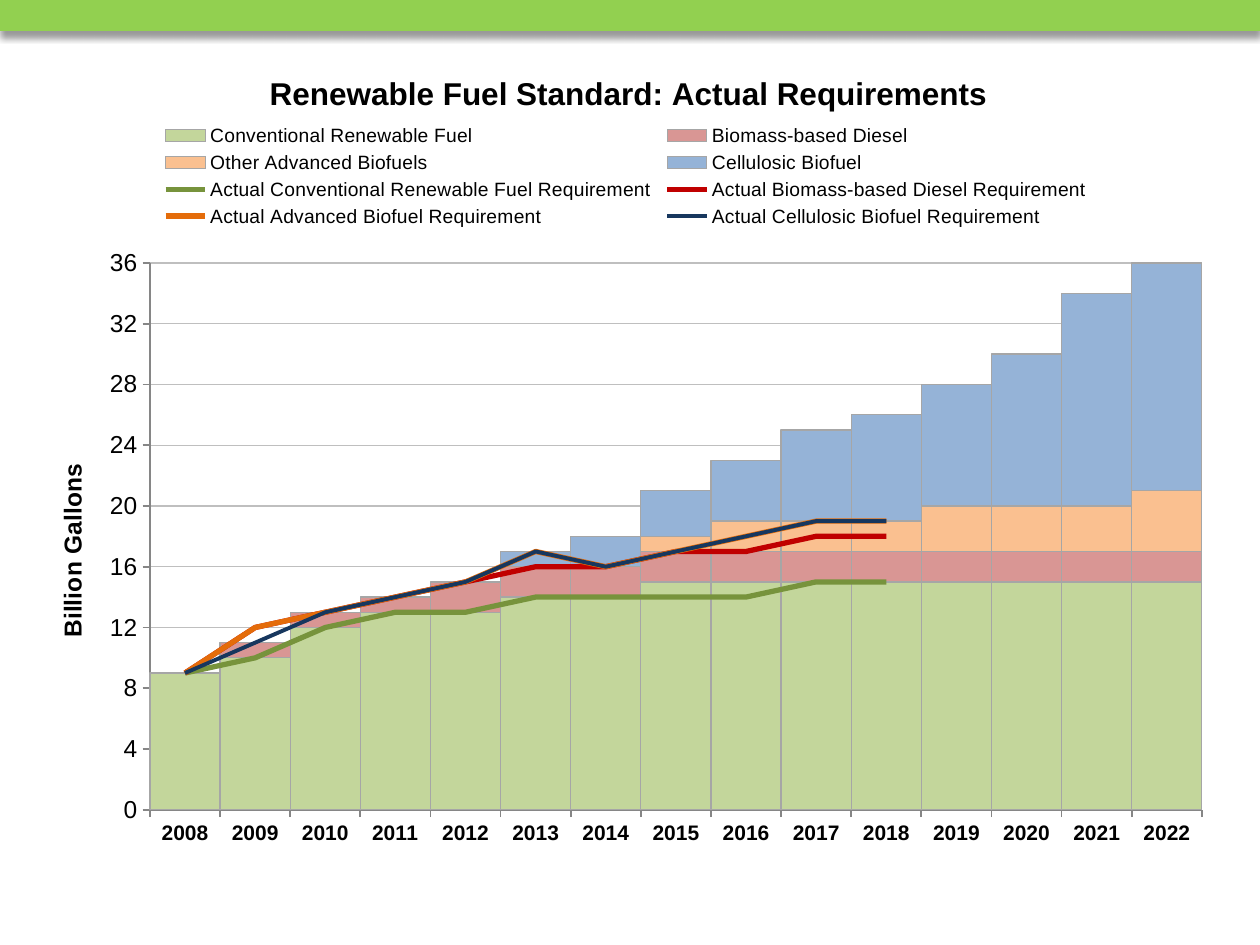
from lxml import etree
from pptx import Presentation
from pptx import util as u
from pptx.chart.data import CategoryChartData
from pptx.dml.color import RGBColor
from pptx.enum import chart as ec, shapes
from pptx.oxml.ns import qn

PX = 914400 // 126
COLORS = {
    "bar": "92D050", "text": "000000", "grid": "BFBFBF", "axis": "868686",
    "edge": "A6A6A6", "conv": "C3D69B", "bio": "D99694", "other": "FAC090",
    "cell": "95B3D7", "conv_req": "77933C", "bio_req": "C00000",
    "adv_req": "E46C0A", "cell_req": "17375E",
}
HUE = {key: RGBColor.from_string(val) for key, val in COLORS.items()}
LEFT, TOP, WIDE, HIGH = 21, 38, 1205, 823  # chart frame


def write(frame, words, size=18, bold=True):
    para = frame.paragraphs[0]
    run = para.add_run()
    run.text = words
    run.font.size, run.font.bold = u.Pt(size), bold
    run.font.name, run.font.color.rgb = "Arial", HUE["text"]


def place(part, spot, x, y, w=None, h=None, inner=False):
    """Fix a chart part at slide px; spot is its layout's child index."""
    for old in part.findall(qn("c:layout")):
        part.remove(old)
    box = etree.Element(qn("c:layout"))
    part.insert(spot, box)
    man = etree.SubElement(box, qn("c:manualLayout"))
    rows = [("xMode", "edge"), ("yMode", "edge"),
            ("x", round((x - LEFT) / WIDE, 4)), ("y", round((y - TOP) / HIGH, 4))]
    if inner:
        rows.insert(0, ("layoutTarget", "inner"))
    if w:
        rows += [("w", round(w / WIDE, 4)), ("h", round(h / HIGH, 4))]
    for tag, val in rows:
        etree.SubElement(man, qn("c:" + tag)).set("val", str(val))


prs = Presentation()
prs.slide_width, prs.slide_height = u.Inches(10), u.Inches(7.5)
slide = prs.slides.add_slide(prs.slide_layouts[6])

# Top band with a soft shadow
band = slide.shapes.add_shape(shapes.MSO_SHAPE.RECTANGLE, 0, 0, prs.slide_width, 31 * PX)
band.fill.solid()
band.fill.fore_color.rgb = HUE["bar"]
band.line.fill.background()
band.shadow.inherit = False
glow = etree.SubElement(band._element.spPr.find(qn("a:effectLst")), qn("a:outerShdw"),
                        blurRad="50800", dist="38100", dir="5400000",
                        algn="t", rotWithShape="0")
tint = etree.SubElement(glow, qn("a:srgbClr"), val="000000")
etree.SubElement(tint, qn("a:alpha"), val="40000")

# Chart data: four stacked columns, then four lines
bars = [
    ("Conventional Renewable Fuel", "conv",
     [9, 10, 12, 13, 13, 14, 14, 15, 15, 15, 15, 15, 15, 15, 15]),
    ("Biomass-based Diesel", "bio",
     [0, 1, 1, 1, 2, 2, 2, 2, 2, 2, 2, 2, 2, 2, 2]),
    ("Other Advanced Biofuels", "other",
     [0, 0, 0, 0, 0, 0, 0, 1, 2, 2, 2, 3, 3, 3, 4]),
    ("Cellulosic Biofuel", "cell",
     [0, 0, 0, 0, 0, 1, 2, 3, 4, 6, 7, 8, 10, 14, 16]),
]
lines = [
    ("Actual Conventional Renewable Fuel Requirement", "conv_req", 3,
     [9, 10, 12, 13, 13, 14, 14, 14, 14, 15, 15]),
    ("Actual Biomass-based Diesel Requirement", "bio_req", 3,
     [9, 12, 13, 14, 15, 16, 16, 17, 17, 18, 18]),
    ("Actual Advanced Biofuel Requirement", "adv_req", 3,
     [9, 12, 13, 14, 15, 17, 16, 17, 18, 19, 19]),
    ("Actual Cellulosic Biofuel Requirement", "cell_req", 2.25,
     [9, 11, 13, 14, 15, 17, 16, 17, 18, 19, 19]),
]
data = CategoryChartData(number_format="0")
data.categories = [str(year) for year in range(2008, 2023)]
for name, *_, vals in bars + lines:
    data.add_series(name, vals)
chart = slide.shapes.add_chart(
    ec.XL_CHART_TYPE.COLUMN_STACKED, LEFT * PX, TOP * PX, WIDE * PX, HIGH * PX, data).chart
chart.font.name, chart.font.size = "Arial", u.Pt(10)
chart.font.color.rgb = HUE["text"]

# Move the requirement series to a line plot on the same axes
cols = chart.plots[0]
cols.gap_width, cols.overlap, cols.vary_by_categories = 0, 100, False
root = cols._element
plot = root.makeelement(qn("c:lineChart"))
root.addnext(plot)
etree.SubElement(plot, qn("c:grouping")).set("val", "standard")
etree.SubElement(plot, qn("c:varyColors")).set("val", "0")
for ser in root.findall(qn("c:ser"))[len(bars):]:
    for flag in ser.findall(qn("c:invertIfNegative")):
        ser.remove(flag)
    plot.append(ser)
etree.SubElement(plot, qn("c:marker")).set("val", "1")
for axis in root.findall(qn("c:axId")):
    etree.SubElement(plot, qn("c:axId")).set("val", axis.get("val"))

# Series colours
for ser, (_, key, _) in zip(chart.plots[0].series, bars):
    ser.format.fill.solid()
    ser.format.fill.fore_color.rgb = HUE[key]
    ser.format.line.color.rgb = HUE["edge"]
    ser.format.line.width = u.Pt(0.75)
for ser, (_, key, thick, _) in zip(chart.plots[1].series, lines):
    ser.format.line.color.rgb = HUE[key]
    ser.format.line.width = u.Pt(thick)
    ser.marker.style = ec.XL_MARKER_STYLE.NONE
    ser.smooth = False

# Axes
cat, val = chart.category_axis, chart.value_axis
for axis, size, bold in ((cat, 12, True), (val, 14, False)):
    axis.major_tick_mark = ec.XL_TICK_MARK.OUTSIDE
    axis.minor_tick_mark = ec.XL_TICK_MARK.NONE
    axis.format.line.color.rgb = HUE["axis"]
    axis.format.line.width = u.Pt(1)
    font = axis.tick_labels.font
    font.name, font.size, font.bold = "Arial", u.Pt(size), bold
    font.color.rgb = HUE["text"]
val.minimum_scale, val.maximum_scale, val.major_unit = 0, 36, 4
val.tick_labels.number_format = "0"
val.tick_labels.number_format_is_linked = False
val.has_major_gridlines = True
val.major_gridlines.format.line.color.rgb = HUE["grid"]
val.major_gridlines.format.line.width = u.Pt(0.75)

# Titles and legend
write(chart.chart_title.text_frame, "Renewable Fuel Standard: Actual Requirements")
write(val.axis_title.text_frame, "Billion Gallons", size=14)
body = val.axis_title.text_frame._txBody.find(qn("a:bodyPr"))
body.set("rot", "-5400000")
body.set("vert", "horz")
chart.has_legend = True
key = chart.legend
key.position, key.include_in_layout = ec.XL_LEGEND_POSITION.TOP, False
key.font.name, key.font.size = "Arial", u.Pt(11)
key.font.color.rgb = HUE["text"]

# Positions of the chart parts
place(chart.chart_title._element, 1, 264, 67)
place(val.axis_title._element, 1, 52, 459)
place(key._element, 1, 156, 120, 940, 112)
place(root.getparent(), 0, 150, 263, 1052, 547, inner=True)

prs.save("out.pptx")
